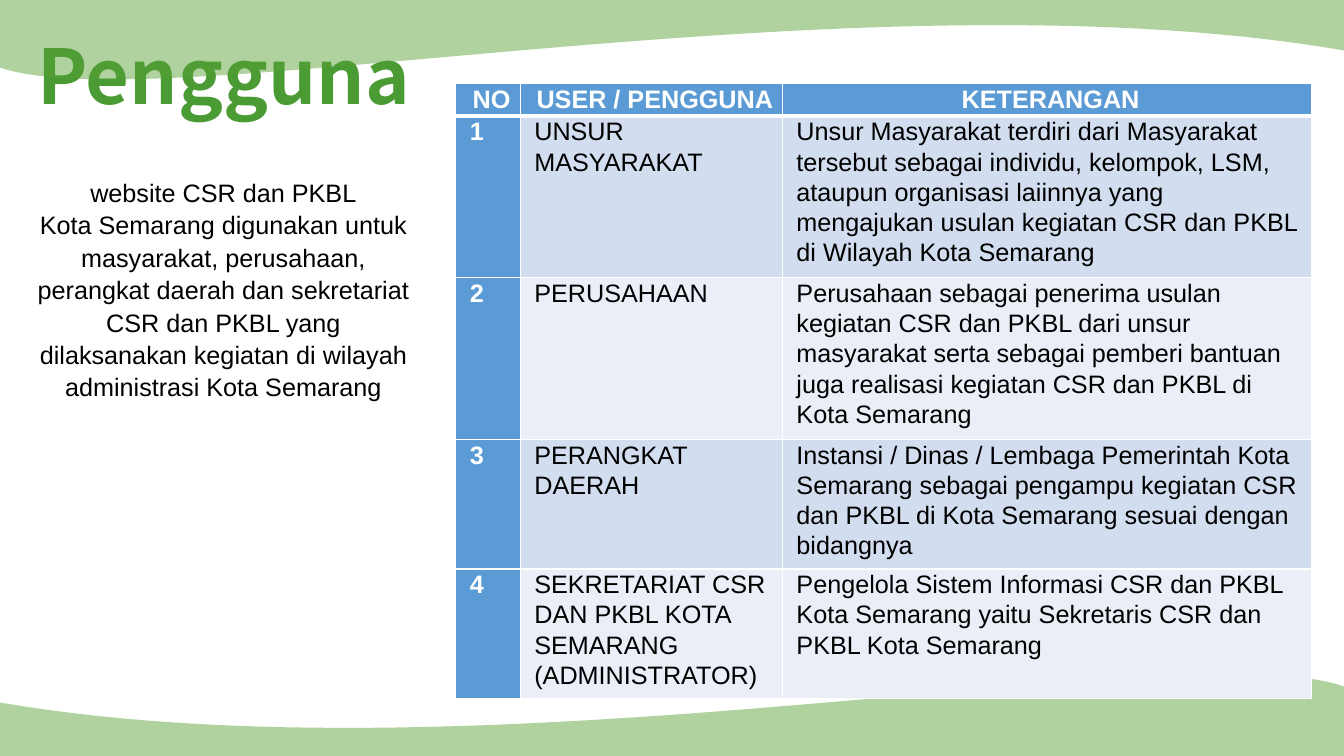
from lxml import etree
from pptx import Presentation
from pptx.dml.color import RGBColor
from pptx.enum.shapes import MSO_SHAPE
from pptx.enum.text import MSO_ANCHOR, MSO_AUTO_SIZE, PP_ALIGN
from pptx.oxml.ns import qn
from pptx.util import Inches, Pt

TITLE = "Pengguna"
INTRO = [
    "website CSR dan PKBL",
    "Kota Semarang digunakan untuk masyarakat, perusahaan, perangkat daerah dan "
    "sekretariat CSR dan PKBL yang dilaksanakan kegiatan di wilayah administrasi Kota Semarang",
]
HEADINGS = ("NO", "USER / PENGGUNA", "KETERANGAN")
USERS = [
    ("UNSUR MASYARAKAT",
     "Unsur Masyarakat terdiri dari Masyarakat tersebut sebagai individu, kelompok, LSM, "
     "ataupun organisasi laiinnya yang mengajukan usulan kegiatan CSR dan PKBL di Wilayah Kota Semarang"),
    ("PERUSAHAAN",
     "Perusahaan sebagai penerima usulan kegiatan CSR dan PKBL dari unsur masyarakat serta "
     "sebagai pemberi bantuan juga realisasi kegiatan CSR dan PKBL di Kota Semarang"),
    ("PERANGKAT DAERAH",
     "Instansi / Dinas / Lembaga Pemerintah Kota Semarang sebagai pengampu kegiatan CSR "
     "dan PKBL di Kota Semarang sesuai dengan bidangnya"),
    ("SEKRETARIAT CSR DAN PKBL KOTA SEMARANG (ADMINISTRATOR)",
     "Pengelola Sistem Informasi CSR dan PKBL Kota Semarang yaitu Sekretaris CSR dan PKBL Kota Semarang"),
]
THEME = {
    "wave": "55A033", "wave_alpha": 47, "title": "4A9B33", "text": "000000", "white": "FFFFFF",
    "accent": "5B9BD5", "bands": ("D2DEEF", "EAEFF7"),
    "title_font": "Noto Sans CJK SC", "body_font": "Arial",
    "title_size": 54, "body_size": 18, "spacing": 1.07,
}
SLIDE_SIZE = (13.33, 7.5)
TITLE_BOX = (0.27, 0.24, 4.03, 1.01)
INTRO_BOX = (0.27, 1.69, 3.89, 2.22)
TABLE_AT = (4.52, 0.83)
COLUMN_WIDTHS = (0.64, 2.6, 5.25)
ROW_HEIGHTS = (0.32, 1.6, 1.6, 1.28, 1.28)
CELL_INSET = 0.07
WAVES = [
    {"curve": ((13.33, 6.81), (11.76, 6.26), (4.85, 7.8), (0, 6.97)), "edge": 7.53},
    {"curve": ((0, 0.67), (1.57, 1.21), (8.49, -0.33), (13.33, 0.5)), "edge": -0.06},
]
WAVE_STEPS = 60


def rgb(color):
    return RGBColor.from_string(color)


def write(paragraph, text, color, font="body_font", size="body_size", bold=False, align=PP_ALIGN.LEFT):
    paragraph.alignment = align
    run = paragraph.add_run()
    run.text = text
    formats = {"name": THEME[font], "size": Pt(THEME[size]), "bold": bold}
    for attribute, value in formats.items():
        setattr(run.font, attribute, value)
    run.font.color.rgb = rgb(color)


def bezier(curve, t):
    weights = ((1 - t) ** 3, 3 * t * (1 - t) ** 2, 3 * t ** 2 * (1 - t), t ** 3)
    return tuple(Inches(sum(w * point[axis] for w, point in zip(weights, curve))) for axis in (0, 1))


def add_wave(slide, curve, edge):
    crest = [bezier(curve, step / WAVE_STEPS) for step in range(WAVE_STEPS + 1)]
    corners = [(Inches(curve[end][0]), Inches(edge)) for end in (-1, 0)]
    builder = slide.shapes.build_freeform(*crest[0])
    builder.add_line_segments(crest[1:] + corners, close=True)
    wave = builder.convert_to_shape()
    wave.shadow.inherit = False
    wave.line.fill.background()
    wave.fill.solid()
    wave.fill.fore_color.rgb = rgb(THEME["wave"])
    color = wave._element.spPr.find(qn("a:solidFill")).find(qn("a:srgbClr"))
    etree.SubElement(color, qn("a:alpha")).set("val", str(THEME["wave_alpha"] * 1000))


def add_title(slide):
    frame = slide.shapes.add_textbox(*map(Inches, TITLE_BOX)).text_frame
    frame.word_wrap = False
    frame.auto_size = MSO_AUTO_SIZE.SHAPE_TO_FIT_TEXT
    write(frame.paragraphs[0], TITLE, THEME["title"], "title_font", "title_size", True)


def add_intro(slide):
    intro = slide.shapes.add_shape(MSO_SHAPE.RECTANGLE, *map(Inches, INTRO_BOX))
    intro.shadow.inherit = False
    intro.line.fill.background()
    intro.fill.solid()
    intro.fill.fore_color.rgb = rgb(THEME["white"])
    frame = intro.text_frame
    formats = {"word_wrap": True, "vertical_anchor": MSO_ANCHOR.TOP,
               "auto_size": MSO_AUTO_SIZE.SHAPE_TO_FIT_TEXT}
    for attribute, value in formats.items():
        setattr(frame, attribute, value)
    for index, text in enumerate(INTRO):
        paragraph = frame.add_paragraph() if index else frame.paragraphs[0]
        paragraph.line_spacing = THEME["spacing"]
        write(paragraph, text, THEME["text"], align=PP_ALIGN.CENTER)


def add_borders(cell, bottom):
    properties = cell._tc.get_or_add_tcPr()
    for side, width in {"lnL": 1, "lnR": 1, "lnT": 1, "lnB": bottom}.items():
        border = etree.SubElement(properties, qn(f"a:{side}"), w=str(Pt(width)))
        fill = etree.SubElement(border, qn("a:solidFill"))
        etree.SubElement(fill, qn("a:srgbClr"), val=THEME["white"])


def fill_cell(cell, text, row, column):
    header = row == 0
    accented = header or column == 0
    margins = {"margin_left": CELL_INSET, "margin_right": CELL_INSET, "margin_top": 0, "margin_bottom": 0}
    for attribute, value in margins.items():
        setattr(cell, attribute, Inches(value))
    add_borders(cell, 3 if header else 1)
    cell.fill.solid()
    cell.fill.fore_color.rgb = rgb(THEME["accent"] if accented else THEME["bands"][(row - 1) % 2])
    paragraph = cell.text_frame.paragraphs[0]
    paragraph.line_spacing = THEME["spacing"]
    paragraph._p.get_or_add_pPr().set("marL", str(Inches(CELL_INSET)))
    write(paragraph, text, THEME["white" if accented else "text"], bold=accented,
          align=PP_ALIGN.CENTER if header else PP_ALIGN.LEFT)


def add_users(slide):
    rows = [HEADINGS] + [(str(number), *user) for number, user in enumerate(USERS, 1)]
    extent = (sum(COLUMN_WIDTHS), sum(ROW_HEIGHTS))
    users = slide.shapes.add_table(len(rows), len(HEADINGS), *map(Inches, TABLE_AT + extent)).table
    for column, width in zip(users.columns, COLUMN_WIDTHS):
        column.width = Inches(width)
    for row, height in zip(users.rows, ROW_HEIGHTS):
        row.height = Inches(height)
    for row, texts in enumerate(rows):
        for column, text in enumerate(texts):
            fill_cell(users.cell(row, column), text, row, column)


def main():
    deck = Presentation()
    deck.slide_width, deck.slide_height = map(Inches, SLIDE_SIZE)
    slide = deck.slides.add_slide(deck.slide_layouts[6])
    add_title(slide)
    for wave in WAVES:
        add_wave(slide, **wave)
    add_users(slide)
    add_intro(slide)
    deck.save("out.pptx")


if __name__ == "__main__":
    main()
